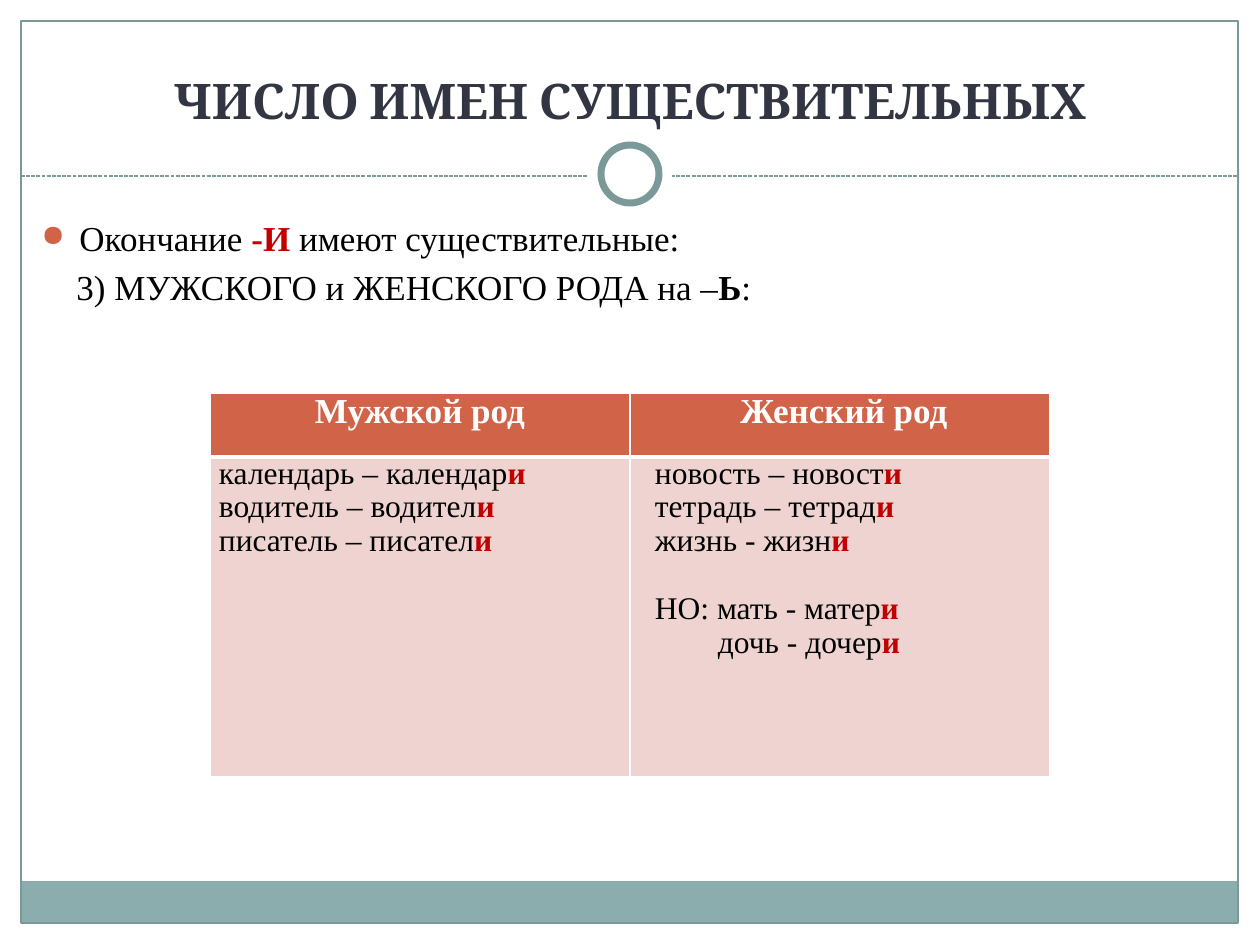
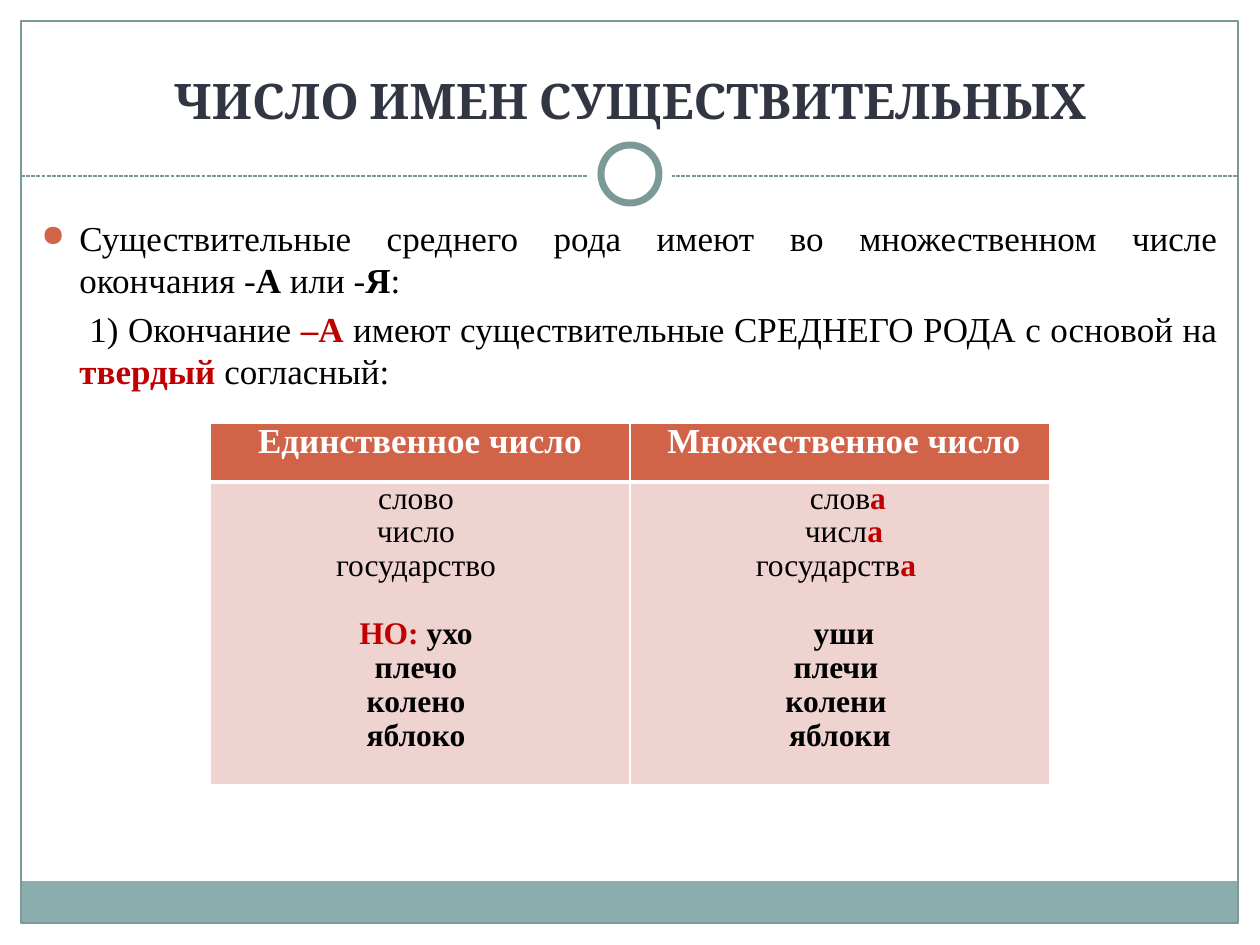
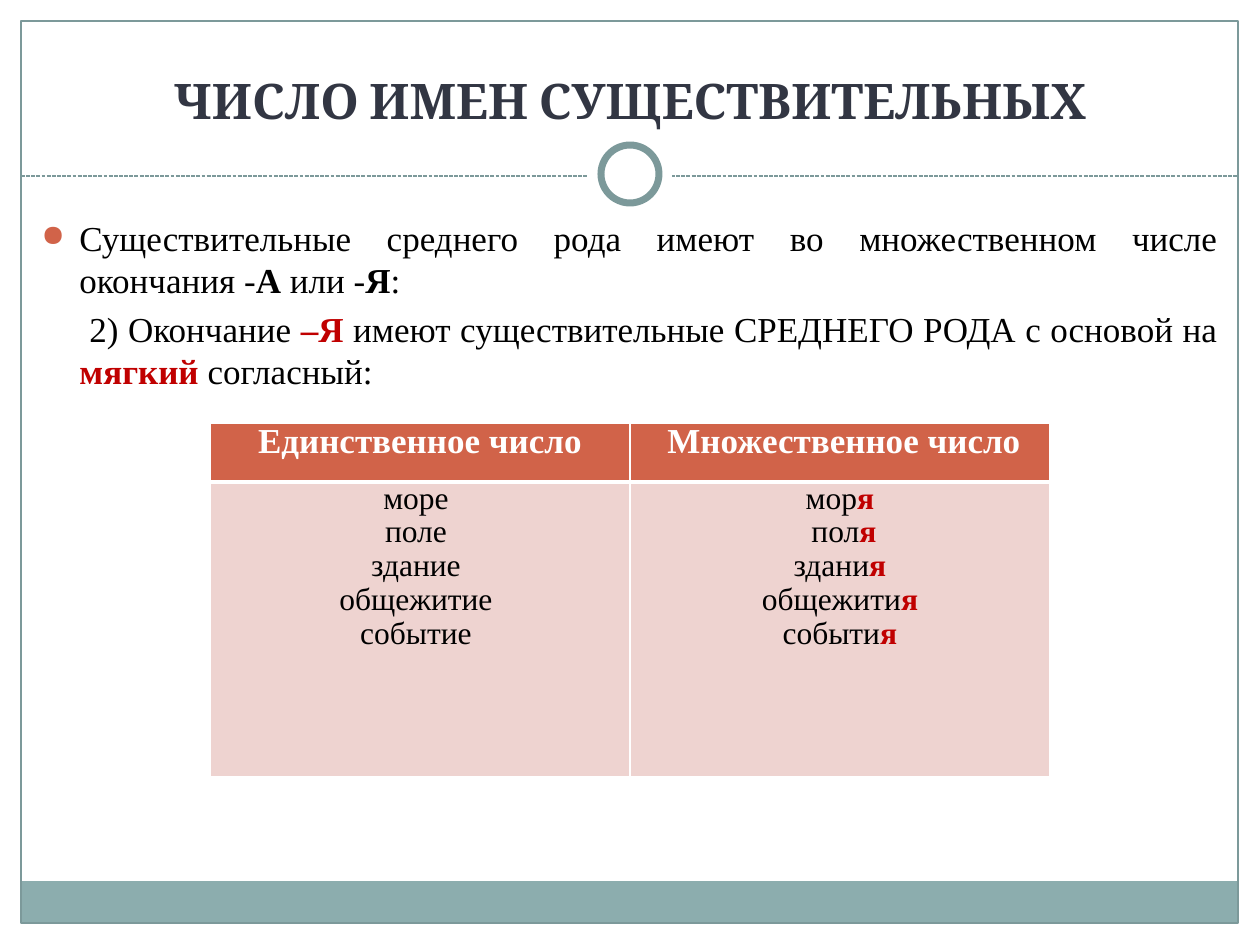
from dataclasses import dataclass

from lxml.etree import SubElement
from pptx import Presentation
from pptx.dml.color import RGBColor as Rgb
from pptx.enum.dml import MSO_LINE
from pptx.enum.shapes import MSO_CONNECTOR, MSO_SHAPE as Shape
from pptx.enum.text import MSO_ANCHOR as Anchor, PP_ALIGN as Align
from pptx.oxml import parse_xml
from pptx.oxml.ns import nsdecls, qn
from pptx.util import Emu, Pt


@dataclass(frozen=True)
class Theme:
    white: str = "FFFFFF"
    black: str = "000000"
    title: str = "323643"
    frame: str = "7C999A"
    footer: str = "8CADAE"
    accent: str = "D16349"
    cell: str = "EED3D0"
    ending: str = "C00000"
    title_font: str = "Cambria"
    body_font: str = "Times New Roman"
    title_size: int = 28
    body_size: int = 20
    word_size: int = 18


theme = Theme()


def px(length):
    return Emu(round(length * 914400 / 126))


def write(paragraph, text, size, color=theme.black, bold=False, font=theme.body_font):
    """Pieces are split at |; a leading ! means red bold, a leading * means bold."""
    for piece in text.split("|"):
        run = paragraph.add_run()
        run.text = piece.lstrip("!*")
        run.font.name = font
        run.font.size = Pt(size)
        run.font.bold = bold or piece[0] in "!*"
        run.font.color.rgb = Rgb.from_string(theme.ending if piece[0] == "!" else color)


# Content: each table line is (text, indent, lines skipped above);
# a negative indent is kept on the right side
title_text = "ЧИСЛО ИМЕН СУЩЕСТВИТЕЛЬНЫХ"
neuter_rule = "Существительные среднего рода имеют во множественном числе окончания -|*А| или -|*Я|:"
number_heads = ["Единственное число", "Множественное число"]
lessons = [
    dict(
        rule="Окончание |!-И| имеют существительные:",
        case="3) МУЖСКОГО и ЖЕНСКОГО РОДА на –|*Ь|:",
        case_indent=-3, top=393, rows=(64, 320), align=Align.LEFT,
        heads=["Мужской род", "Женский род"],
        words=[
            [("календарь – календар|!и", 0, 0), ("водитель – водител|!и", 0, 0),
             ("писатель – писател|!и", 0, 0)],
            [("новость – новост|!и", 16, 0), ("тетрадь – тетрад|!и", 16, 0),
             ("жизнь - жизн|!и", 16, 0), ("НО: мать - матер|!и", 16, 1),
             ("дочь - дочер|!и", 79, 0)],
        ],
    ),
    dict(
        rule=neuter_rule,
        case="1) Окончание |!–А| имеют существительные СРЕДНЕГО РОДА с основой на |!твердый| согласный:",
        case_indent=10, top=423, rows=(59, 303), align=Align.CENTER,
        heads=number_heads,
        words=[
            [("слово", -8, 0), ("число", 0, 0), ("государство", 0, 0),
             ("!НО: |*ухо", 0, 1), ("*плечо", 0, 0), ("*колено", 0, 0), ("*яблоко", 0, 0)],
            [("слов|!а", 16, 0), ("числ|!а", 8, 0), ("государств|!а", -8, 0),
             ("*уши", 16, 1), ("*плечи", 0, 0), ("*колени", 0, 0), ("*яблоки", 8, 0)],
        ],
    ),
    dict(
        rule=neuter_rule,
        case="2) Окончание |!–Я| имеют существительные СРЕДНЕГО РОДА с основой на |!мягкий| согласный:",
        case_indent=10, top=423, rows=(59, 295), align=Align.CENTER,
        heads=number_heads,
        words=[
            [("море", -8, 0), ("поле", 0, 0), ("здание", 0, 0),
             ("общежитие", 0, 0), ("событие", 0, 0)],
            [("мор|!я", 0, 0), ("пол|!я", 8, 0), ("здани|!я", 0, 0),
             ("общежити|!я", 0, 0), ("событи|!я", 0, 0)],
        ],
    ),
]

# Shared decoration: shape, left, top, width, height, fill, line width
footer_band = (Shape.RECTANGLE, 21, 881, 1217, 42, theme.footer, 0)
page_frame = (Shape.RECTANGLE, 21, 21, 1217, 902, None, 0.75)
ring_gap = (Shape.OVAL, 588, 132, 84, 84, theme.white, 0)
ring = (Shape.OVAL, 601, 145, 58, 58, theme.white, 4)

prs = Presentation()
prs.slide_width, prs.slide_height = px(1260), px(945)

for lesson in lessons:
    slide = prs.slides.add_slide(prs.slide_layouts[6])

    # Frame, footer band, divider and ring
    for part in (footer_band, page_frame, None, ring_gap, ring):
        if part is None:
            divider = slide.shapes.add_connector(
                MSO_CONNECTOR.STRAIGHT, px(21), px(176), px(1238), px(176))
            divider.line.color.rgb = Rgb.from_string(theme.frame)
            divider.line.width = Pt(0.75)
            divider.line.dash_style = MSO_LINE.SQUARE_DOT
            SubElement(divider._element.spPr, qn("a:effectLst"))
            continue
        kind, left, top, width, height, fill, weight = part
        ornament = slide.shapes.add_shape(kind, px(left), px(top), px(width), px(height))
        ornament.shadow.inherit = False
        if fill:
            ornament.fill.solid()
            ornament.fill.fore_color.rgb = Rgb.from_string(fill)
        else:
            ornament.fill.background()
        if weight:
            ornament.line.color.rgb = Rgb.from_string(theme.frame)
            ornament.line.width = Pt(weight)
        else:
            ornament.line.fill.background()

    # Title
    heading = slide.shapes.add_textbox(px(42), px(31), px(1176), px(105)).text_frame
    heading.word_wrap = True
    heading.vertical_anchor = Anchor.BOTTOM
    heading.paragraphs[0].alignment = Align.CENTER
    write(heading.paragraphs[0], title_text, theme.title_size, theme.title, True, theme.title_font)

    # Rule with a bullet, then the case it covers
    body = slide.shapes.add_textbox(px(29), px(210), px(1201), px(630)).text_frame
    body.word_wrap = True
    rule, case = body.paragraphs[0], body.add_paragraph()
    for paragraph, text, indent in ((rule, lesson["rule"], -38),
                                    (case, lesson["case"], lesson["case_indent"])):
        props = paragraph._p.get_or_add_pPr()
        props.set("marL", str(px(38)))
        props.set("indent", str(px(indent)))
        if paragraph is rule:
            color = SubElement(props, qn("a:buClr"))
            SubElement(color, qn("a:srgbClr")).set("val", theme.accent)
            SubElement(props, qn("a:buSzPct")).set("val", "85000")
            SubElement(props, qn("a:buChar")).set("char", "●")
        else:
            SubElement(props, qn("a:buNone"))
        paragraph.alignment = Align.JUSTIFY
        paragraph.line_spacing = Pt(24)
        write(paragraph, text, theme.body_size)
    case.space_before = Pt(4)

    # Table of examples
    examples = slide.shapes.add_table(
        2, 2, px(210), px(lesson["top"]), px(840), px(sum(lesson["rows"]))).table
    examples.first_row = examples.horz_banding = False
    for row, height in zip(examples.rows, lesson["rows"]):
        row.height = px(height)
    for col in range(2):
        examples.columns[col].width = px(420)
        head_lines = [(lesson["heads"][col], 8 * col, 0)]
        for row, lines in enumerate((head_lines, lesson["words"][col])):
            is_head = row == 0
            cell = examples.cell(row, col)
            cell.margin_left = cell.margin_right = px(9)
            cell.margin_top = cell.margin_bottom = 0
            cell.fill.solid()
            cell.fill.fore_color.rgb = Rgb.from_string(theme.accent if is_head else theme.cell)
            borders = (("L", 1), ("R", 1), ("T", 1 if is_head else 3), ("B", 3 if is_head else 1))
            for place, (side, weight) in enumerate(borders):
                cell._tc.get_or_add_tcPr().insert(place, parse_xml(
                    f'<a:ln{side} {nsdecls("a")} w="{Pt(weight)}"><a:solidFill>'
                    f'<a:srgbClr val="{theme.white}"/></a:solidFill></a:ln{side}>'))
            for number, (text, indent, skipped) in enumerate(lines):
                frame = cell.text_frame
                paragraph = frame.add_paragraph() if number else frame.paragraphs[0]
                paragraph._p.get_or_add_pPr().set(
                    "marL" if indent >= 0 else "marR", str(px(abs(indent))))
                paragraph.alignment = Align.CENTER if is_head else lesson["align"]
                paragraph.line_spacing = 0.97
                if skipped:
                    paragraph.space_before = px(34 * skipped)
                if is_head:
                    write(paragraph, text, theme.body_size, theme.white, True)
                else:
                    write(paragraph, text, theme.word_size)

prs.save("out.pptx")
